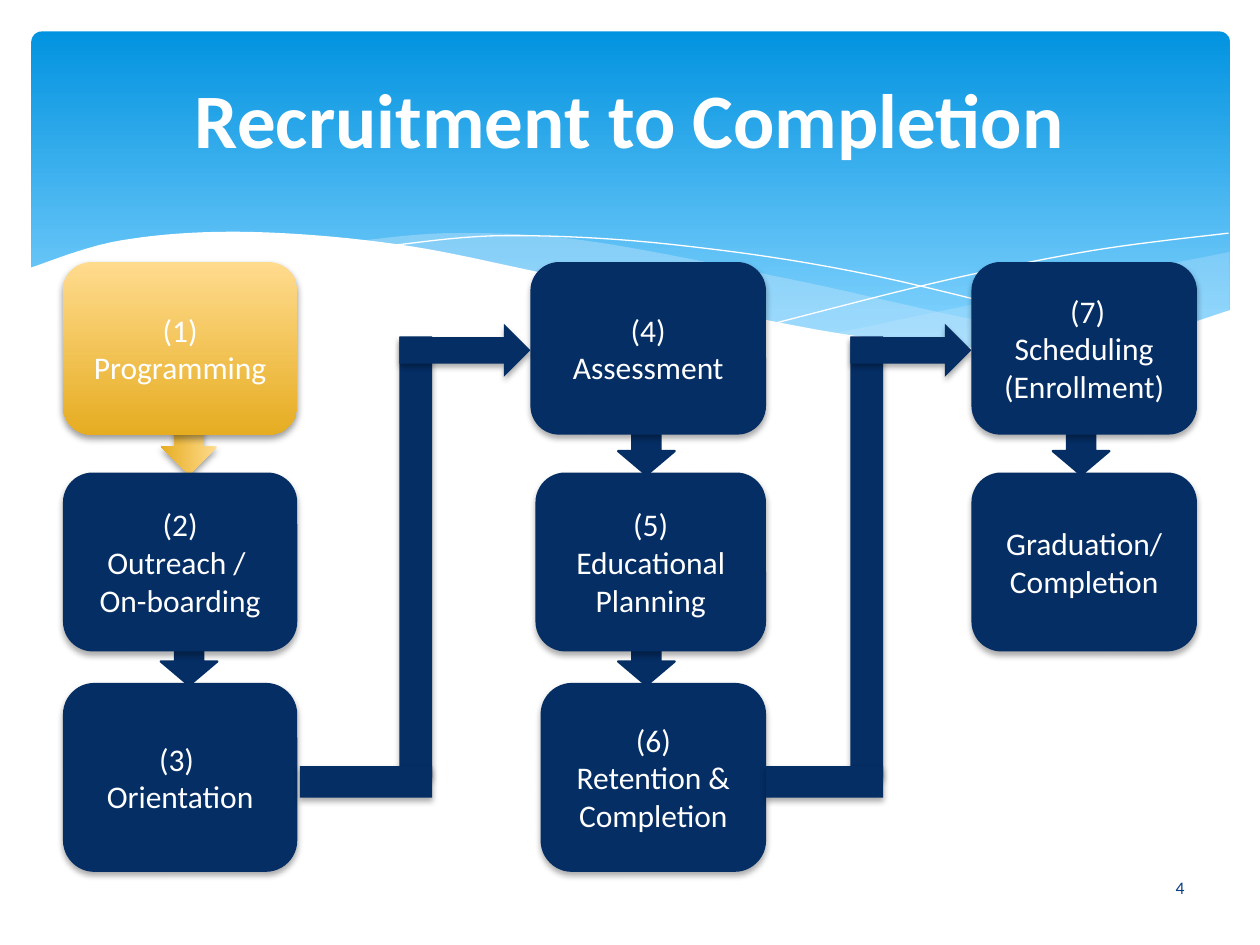
"""Build the Recruitment to Completion flow slide."""
from lxml import etree
from pptx import Presentation, util as u
from pptx.dml.color import RGBColor
from pptx.enum import shapes, text
from pptx.oxml import ns

NAVY = RGBColor(0x05, 0x2E, 0x65)
WHITE = RGBColor(0xFF, 0xFF, 0xFF)
PALE = RGBColor(0xC6, 0xE7, 0xFC)
INK = RGBColor(0x07, 0x3E, 0x87)
SKY = [(0, RGBColor(0x02, 0x93, 0xE0)), (0.9, RGBColor(0x83, 0xD3, 0xFE))]
GOLD = [(0, RGBColor(0xFF, 0xDB, 0x8E)), (1, RGBColor(0xE6, 0xAD, 0x22))]
FONT = "Calibri"
KIND = shapes.MSO_SHAPE

TITLE = "Recruitment to Completion"
PAGE = "4"
STEPS = [
    [["(1)", "Programming"], ["(2)", "Outreach / ", "On-boarding"], ["(3) ", "Orientation"]],
    [["(4)", "Assessment"], ["(5)", "Educational Planning"],
     ["(6)", "Retention &", "Completion"]],
    [[" (7)", "Scheduling", "(Enrollment)"], ["Graduation/ Completion"]],
]
COLS = [(0.5, 2.36, 0, 1.5), (4.21, 6.08, 0.04, 5.13), (7.71, 9.5, 0, 8.58)]
ROWS = [(2.08, 1.37), (3.75, 1.42), (5.42, 1.5)]
LINKS = [(2.38, 3.17, 4.21), (6.08, 6.75, 7.71)]
BAR = 0.26

WAVES = [
    ([[(9.76, 2), (8.61, 2.23), (6.61, 2.65)],
      [(6.61, 2.65), (7.69, 2.77), (8.89, 2.72), (9.76, 2.47)]], PALE, 29),
    ([[(2.86, 1.91), (3.61, 1.85), (4.65, 1.91), (6.29, 2.22), (7.75, 2.54), (8.93, 2.73)],
      [(8.93, 2.73), (8.07, 2.78), (6.8, 2.68), (4.49, 2.22), (2.86, 1.91)]], PALE, 40),
    ([[(3.09, 1.95), (4.01, 1.87), (5.33, 1.94), (6.95, 2.19), (9.07, 2.72)]], None, 100),
    ([[(6.13, 2.57), (7.48, 2.23), (8.66, 1.99), (9.75, 1.85)]], None, 100),
    ([[(9.77, 2.46), (8.99, 2.69), (8.09, 2.77), (6.68, 2.65), (4.47, 2.2), (3.16, 1.94),
       (1.93, 1.84), (0.95, 1.91), (0.23, 2.13)], [(0.23, 3.29), (9.77, 3.29)]], WHITE, 100),
]


def paint(shape, color):
    """Fill a shape with one colour or a downward gradient."""
    shape.shadow.inherit = False
    shape.line.fill.background()
    if isinstance(color, RGBColor):
        shape.fill.solid()
        shape.fill.fore_color.rgb = color
        return
    shape.fill.gradient()
    shape.fill.gradient_angle = 270
    for stop, (place, tone) in zip(shape.fill.gradient_stops, color):
        stop.position = place
        stop.color.rgb = tone


def fade(tone, alpha):
    """Give a colour element an opacity in percent."""
    etree.SubElement(tone, ns.qn("a:alpha"), val=str(alpha * 1000))


def shade(shape, color):
    """Cast a soft shadow straight down."""
    alpha, blur, dist = (38, 4, 2) if color is GOLD else (32, 3.5, 2.2)
    effects = shape.element.spPr.find(ns.qn("a:effectLst"))
    outer = etree.SubElement(
        effects, ns.qn("a:outerShdw"), blurRad=str(u.Pt(blur)), dist=str(u.Pt(dist)),
        dir="5400000", algn="ctr", rotWithShape="0")
    fade(etree.SubElement(outer, ns.qn("a:srgbClr"), val="000000"), alpha)


def add(slide, kind, spot, color, soft=True):
    """Add a painted preset shape."""
    shape = slide.shapes.add_shape(kind, *map(u.Inches, spot))
    paint(shape, color)
    if soft:
        shade(shape, color)
    return shape


def write(frame, lines, size, color, bold=False):
    """Put centred lines in a text frame."""
    frame.word_wrap = True
    frame.vertical_anchor = text.MSO_ANCHOR.MIDDLE
    for num, line in enumerate(lines):
        para = frame.paragraphs[0] if num == 0 else frame.add_paragraph()
        para.text = line
        para.alignment = text.PP_ALIGN.CENTER
        para.font.name, para.font.size, para.font.bold = FONT, u.Pt(size), bold
        para.font.color.rgb = color


def smooth(knots, parts=10):
    """Return points on a Catmull-Rom curve through the knots."""
    ends = [knots[0], *knots, knots[-1]]
    points = [knots[0]]
    for four in zip(ends, ends[1:], ends[2:], ends[3:]):
        for part in range(1, parts + 1):
            t = part / parts
            points.append(tuple(
                b + t * (c - a + t * (2 * a - 5 * b + 4 * c - d
                                      + t * (3 * b - a - 3 * c + d))) / 2
                for a, b, c, d in zip(*four)))
    return points


def wave(slide, curves, color, alpha):
    """Draw a filled wave, or a thin white curve when there is no colour."""
    spots = [tuple(map(u.Inches, point)) for knots in curves for point in smooth(knots)]
    pen = slide.shapes.build_freeform(*spots[0])
    pen.add_line_segments(spots[1:], close=color is not None)
    shape = pen.convert_to_shape()
    paint(shape, color or WHITE)
    if color is None:
        shape.fill.background()
        shape.line.color.rgb = WHITE
        shape.line.width = u.Pt(0)
    elif alpha < 100:
        fade(shape.element.spPr.find(".//" + ns.qn("a:srgbClr")), alpha)


def drop(slide, mid, tip, color):
    """Point an arrow down to a tip."""
    long, wide = (0.45 if color is GOLD else 0.38), 0.45
    spot = (mid - long / 2, tip - long / 2 - wide / 2, long, wide)
    arrow = add(slide, KIND.RIGHT_ARROW, spot, color, color is GOLD)
    arrow.rotation = 90
    if color is NAVY:
        arrow.line.color.rgb = NAVY
        arrow.line.width = u.Pt(1.25)


def main():
    """Lay out the slide and save it."""
    deck = Presentation()
    deck.slide_width, deck.slide_height = u.Inches(10), u.Inches(7.5)
    slide = deck.slides.add_slide(deck.slide_layouts[5])

    panel = add(slide, KIND.ROUNDED_RECTANGLE, (0.25, 0.25, 9.51, 2.7), SKY, False)
    panel.adjustments[0] = 0.03
    for curves, color, alpha in WAVES:
        wave(slide, curves, color, alpha)

    title = slide.shapes.title
    title.left, title.top, title.width, title.height = map(u.Inches, (0.5, 0.25, 9, 1.37))
    write(title.text_frame, [TITLE], 44, WHITE, True)
    title.element.getparent().append(title.element)

    for col, ((left, right, shift, mid), steps) in enumerate(zip(COLS, STEPS)):
        tones = [GOLD if col == row == 0 else NAVY for row in range(len(steps))]
        for (top, _), tone in zip(ROWS[1:len(steps)], tones):
            drop(slide, mid, top + 0.02, tone)
        for row, ((top, high), lines, tone) in enumerate(zip(ROWS, steps, tones)):
            edge = left + row * shift
            box = add(slide, KIND.ROUNDED_RECTANGLE, (edge, top, right - edge, high), tone)
            write(box.text_frame, lines, 18, WHITE)

    for start, turn, end in LINKS:
        add(slide, KIND.RECTANGLE, (turn, 2.67, BAR, 3.5), NAVY)
        add(slide, KIND.RECTANGLE, (start, 6.08, turn + BAR - start, 0.25), NAVY)
        add(slide, KIND.RIGHT_ARROW, (turn, 2.57, end - turn, 0.42), NAVY)

    page = slide.shapes.add_textbox(*map(u.Inches, (8.73, 6.84, 1.27, 0.4)))
    write(page.text_frame, [PAGE], 10, INK)
    deck.save("out.pptx")


if __name__ == "__main__":
    main()
